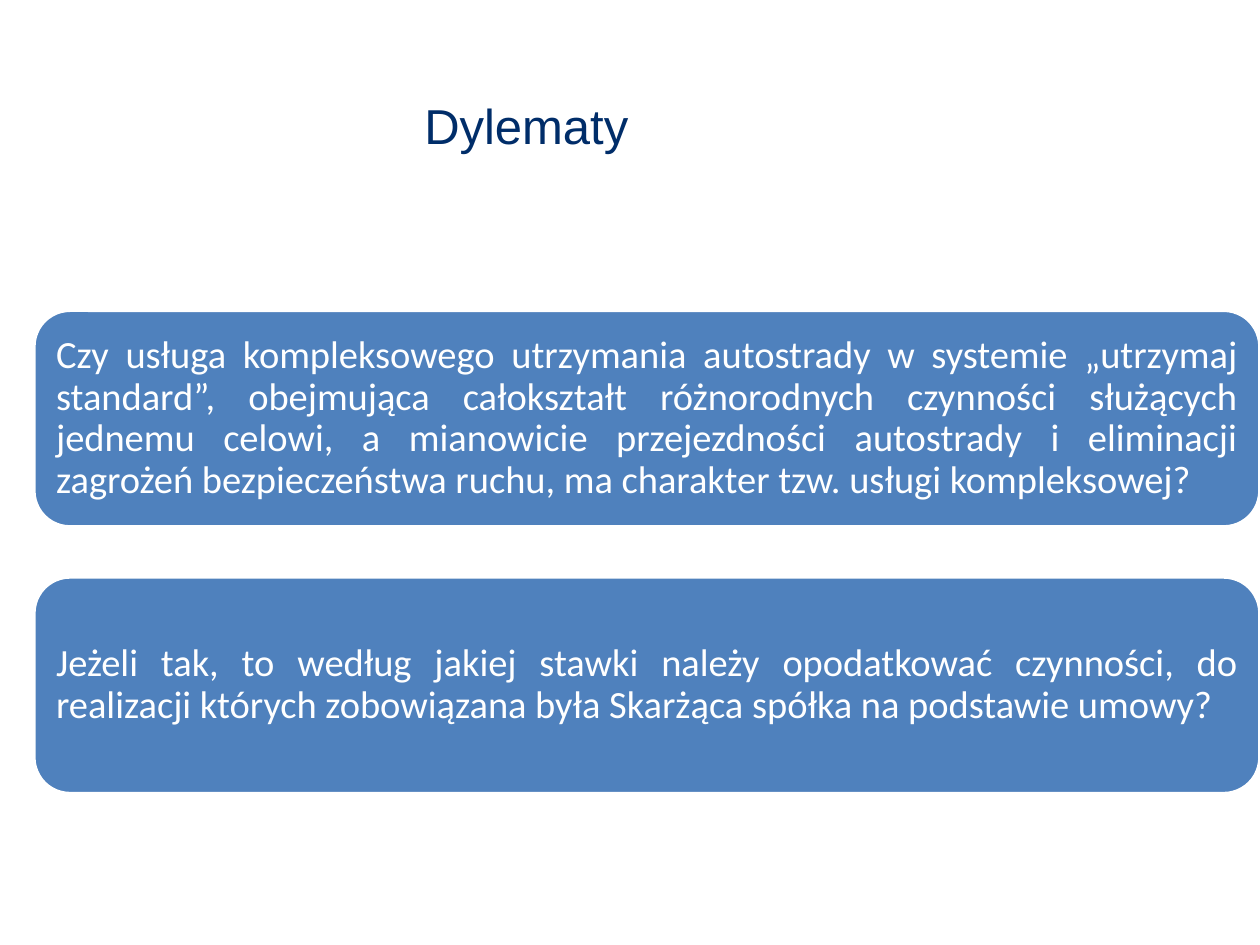
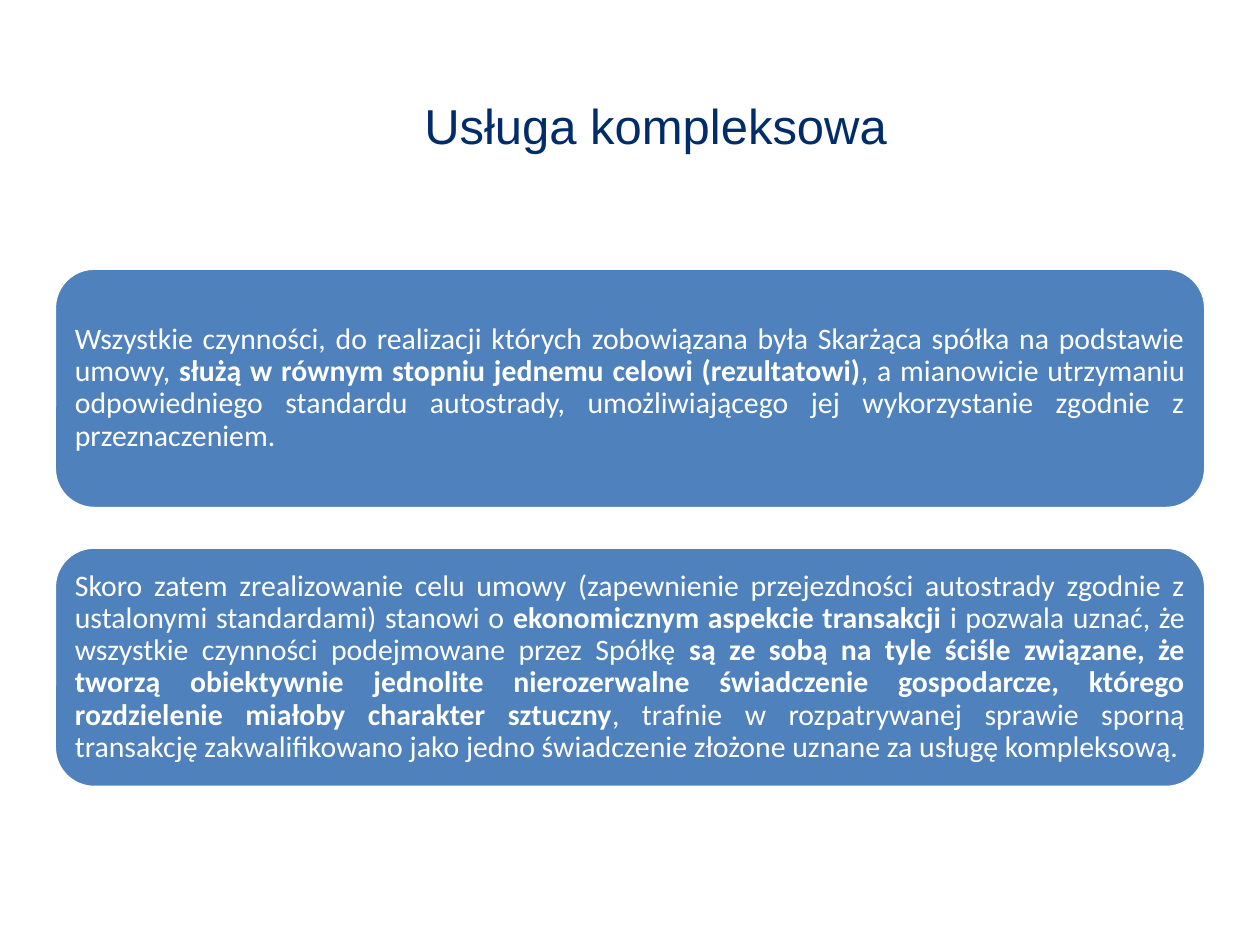
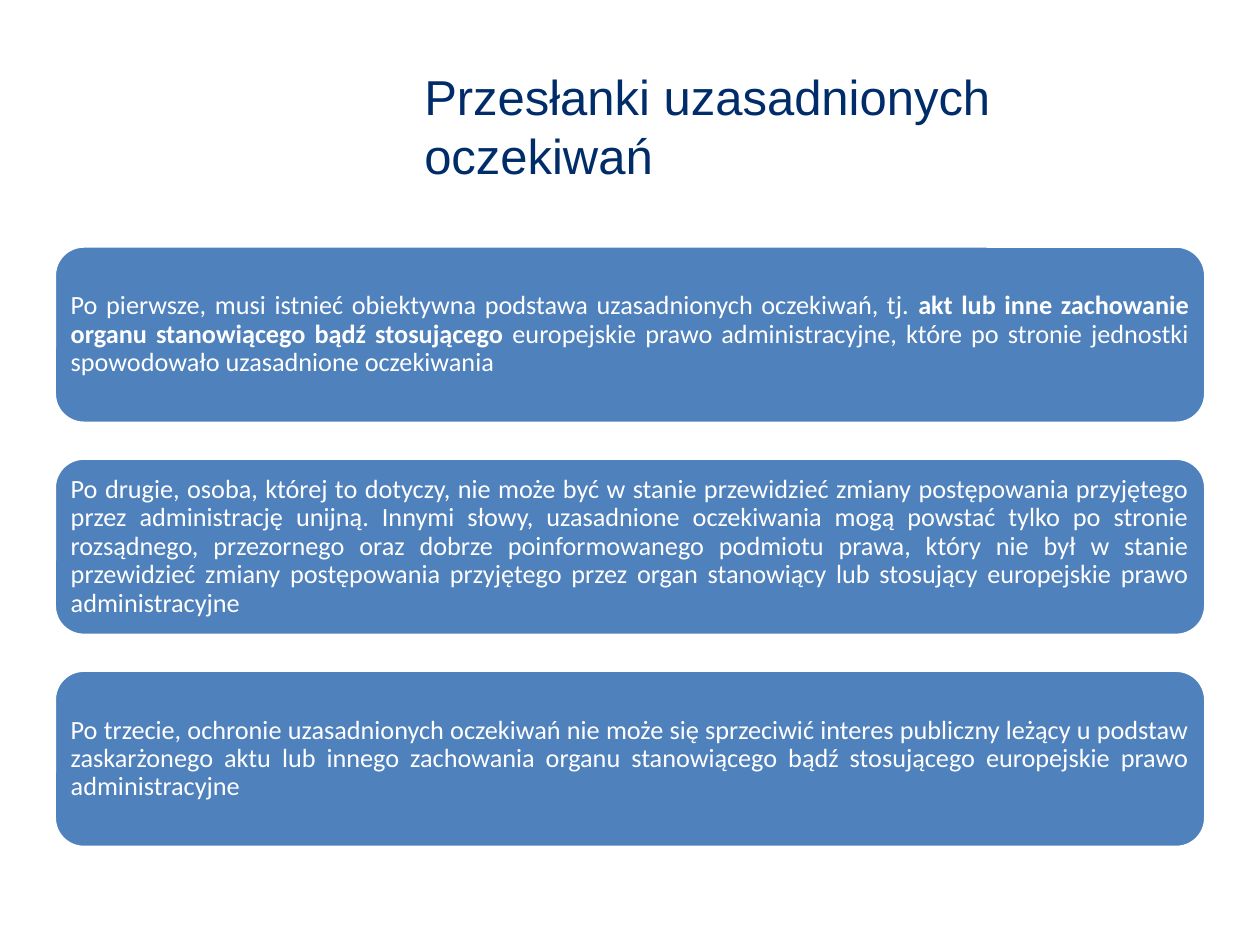
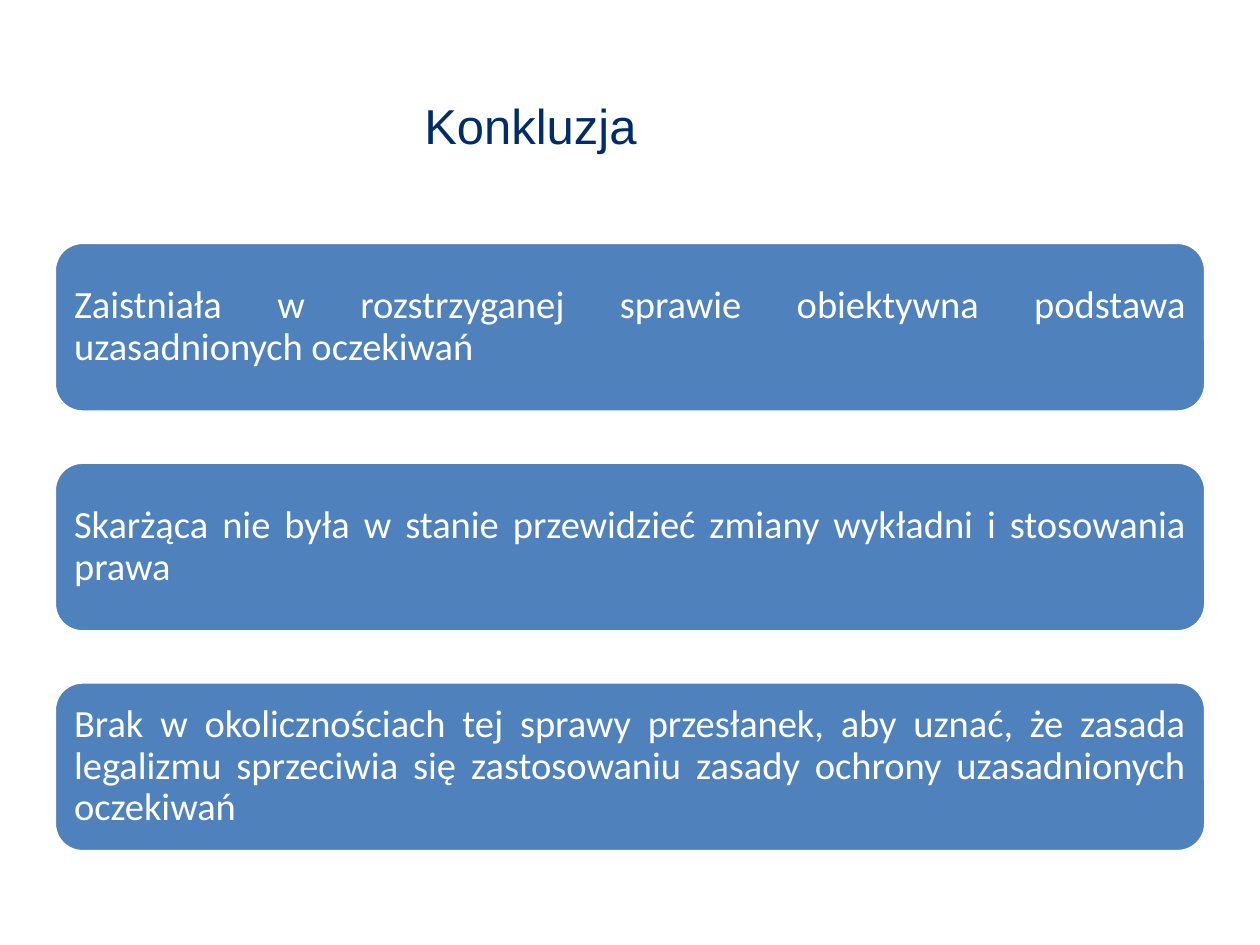
import pptx
import pptx.dml.color
import pptx.enum.shapes
import pptx.enum.text
import pptx.util

Pt = pptx.util.Pt
Shape = pptx.enum.shapes.MSO_SHAPE
Align = pptx.enum.text.PP_ALIGN
Anchor = pptx.enum.text.MSO_ANCHOR

# Shared look
NAVY, BLUE, WHITE = "002D69", "4F81BD", "FFFFFF"
TITLE = (235.4, 31.7, 448.6, 79.9)
LEFT, WIDTH = 31, 658
CORNER = 0.0488  # part of a card's height that its round corner takes

# Title, card box (left, top, width, height), pitch, text size, cards.
# Each card is a list of parts: plain, bold, plain, ...
SLIDES = [
    ("Dylematy", (19.4, 177.3, 700.6, 123.8), 152.4, 22, [
        ["Czy usługa kompleksowego utrzymania autostrady w systemie "
         "„utrzymaj standard”, obejmująca całokształt różnorodnych czynności "
         "służących jednemu celowi, a mianowicie przejezdności autostrady "
         "i eliminacji zagrożeń bezpieczeństwa ruchu, ma charakter "
         "tzw. usługi kompleksowej?"],
        ["Jeżeli tak, to według jakiej stawki należy opodatkować czynności, "
         "do realizacji których zobowiązana była Skarżąca spółka "
         "na podstawie umowy?"],
    ]),
    ("Usługa kompleksowa", (LEFT, 153.2, WIDTH, 137.4), 159.4, 17, [
        ["Wszystkie czynności, do realizacji których zobowiązana była "
         "Skarżąca spółka na podstawie umowy, ",
         "służą w równym stopniu jednemu celowi (rezultatowi)",
         ", a mianowicie utrzymaniu odpowiedniego standardu autostrady, "
         "umożliwiającego jej wykorzystanie zgodnie z przeznaczeniem."],
        ["Skoro zatem zrealizowanie celu umowy (zapewnienie przejezdności "
         "autostrady zgodnie z ustalonymi standardami) stanowi o ",
         "ekonomicznym aspekcie transakcji",
         " i pozwala uznać, że wszystkie czynności podejmowane przez Spółkę ",
         "są ze sobą na tyle ściśle związane, że tworzą obiektywnie jednolite "
         "nierozerwalne świadczenie gospodarcze, którego rozdzielenie miałoby "
         "charakter sztuczny",
         ", trafnie w rozpatrywanej sprawie sporną transakcję zakwalifikowano "
         "jako jedno świadczenie złożone uznane za usługę kompleksową."],
    ]),
    ("Przesłanki uzasadnionych oczekiwań",
     (LEFT, 140.6, WIDTH, 101.3), 121.2, 15, [
        ["Po pierwsze, musi istnieć obiektywna podstawa uzasadnionych "
         "oczekiwań, tj. ",
         "akt lub inne zachowanie organu stanowiącego bądź stosującego ",
         "europejskie prawo administracyjne, które po stronie jednostki "
         "spowodowało uzasadnione oczekiwania"],
        ["Po drugie, osoba, której to dotyczy, nie może być w stanie "
         "przewidzieć zmiany postępowania przyjętego przez administrację "
         "unijną. Innymi słowy, uzasadnione oczekiwania mogą powstać tylko "
         "po stronie rozsądnego, przezornego oraz dobrze poinformowanego "
         "podmiotu prawa, który nie był w stanie przewidzieć zmiany "
         "postępowania przyjętego przez organ stanowiący lub stosujący "
         "europejskie prawo administracyjne"],
        ["Po trzecie, ochronie uzasadnionych oczekiwań nie może się "
         "sprzeciwić interes publiczny leżący u podstaw zaskarżonego aktu "
         "lub innego zachowania organu stanowiącego bądź stosującego "
         "europejskie prawo administracyjne"],
    ]),
    ("Konkluzja", (LEFT, 138.5, WIDTH, 97), 125.6, 22, [
        ["Zaistniała w rozstrzyganej sprawie obiektywna podstawa "
         "uzasadnionych oczekiwań"],
        ["Skarżąca nie była w stanie przewidzieć zmiany wykładni "
         "i stosowania prawa"],
        ["Brak w okolicznościach tej sprawy przesłanek, aby uznać, że zasada "
         "legalizmu sprzeciwia się zastosowaniu zasady ochrony uzasadnionych "
         "oczekiwań"],
    ]),
]


def color(code):
    return pptx.dml.color.RGBColor.from_string(code)


def write(shapes, box, parts, font, size, code):
    """Add a text box whose every second part is bold."""
    frame = shapes.add_textbox(*map(Pt, box)).text_frame
    frame.word_wrap = True
    frame.vertical_anchor = Anchor.MIDDLE
    para = frame.paragraphs[0]
    para.font.name, para.font.size = font, Pt(size)
    para.font.color.rgb = color(code)
    for i, part in enumerate(parts):
        run = para.add_run()
        run.text = part
        if i % 2:
            run.font.bold = True
    return frame


def card(shapes, box, parts, size):
    left, top, width, height = box
    # Round panel
    panel = shapes.add_shape(Shape.ROUNDED_RECTANGLE, *map(Pt, box))
    panel.shadow.inherit = False
    panel.fill.solid()
    panel.fill.fore_color.rgb = color(BLUE)
    panel.line.color.rgb = color(WHITE)
    panel.line.width = Pt(2)
    # Text inside the corners
    gap = height * CORNER
    inner = (left + gap, top + gap, width - 2 * gap, height - 2 * gap)
    frame = write(shapes, inner, parts, "Calibri", size, WHITE)
    frame.margin_left = frame.margin_right = Pt(0.3 * size)
    frame.margin_top = frame.margin_bottom = Pt(0.3 * size)
    para = frame.paragraphs[0]
    para.alignment = Align.JUSTIFY
    para.line_spacing = 0.9


def stack(slide, box, pitch, size, cards):
    """Place cards one below another, the first one in the box."""
    left, top, width, height = box
    group = slide.shapes.add_group_shape()
    for i, parts in enumerate(cards):
        place = (left, top + i * pitch, width, height)
        card(group.shapes, place, parts, size)


def main():
    deck = pptx.Presentation()
    deck.slide_width, deck.slide_height = Pt(720), Pt(540)
    for title, box, pitch, size, cards in SLIDES:
        slide = deck.slides.add_slide(deck.slide_layouts[6])
        write(slide.shapes, TITLE, [title], "Arial", 28, NAVY)
        stack(slide, box, pitch, size, cards)
    deck.save("out.pptx")


if __name__ == "__main__":
    main()
